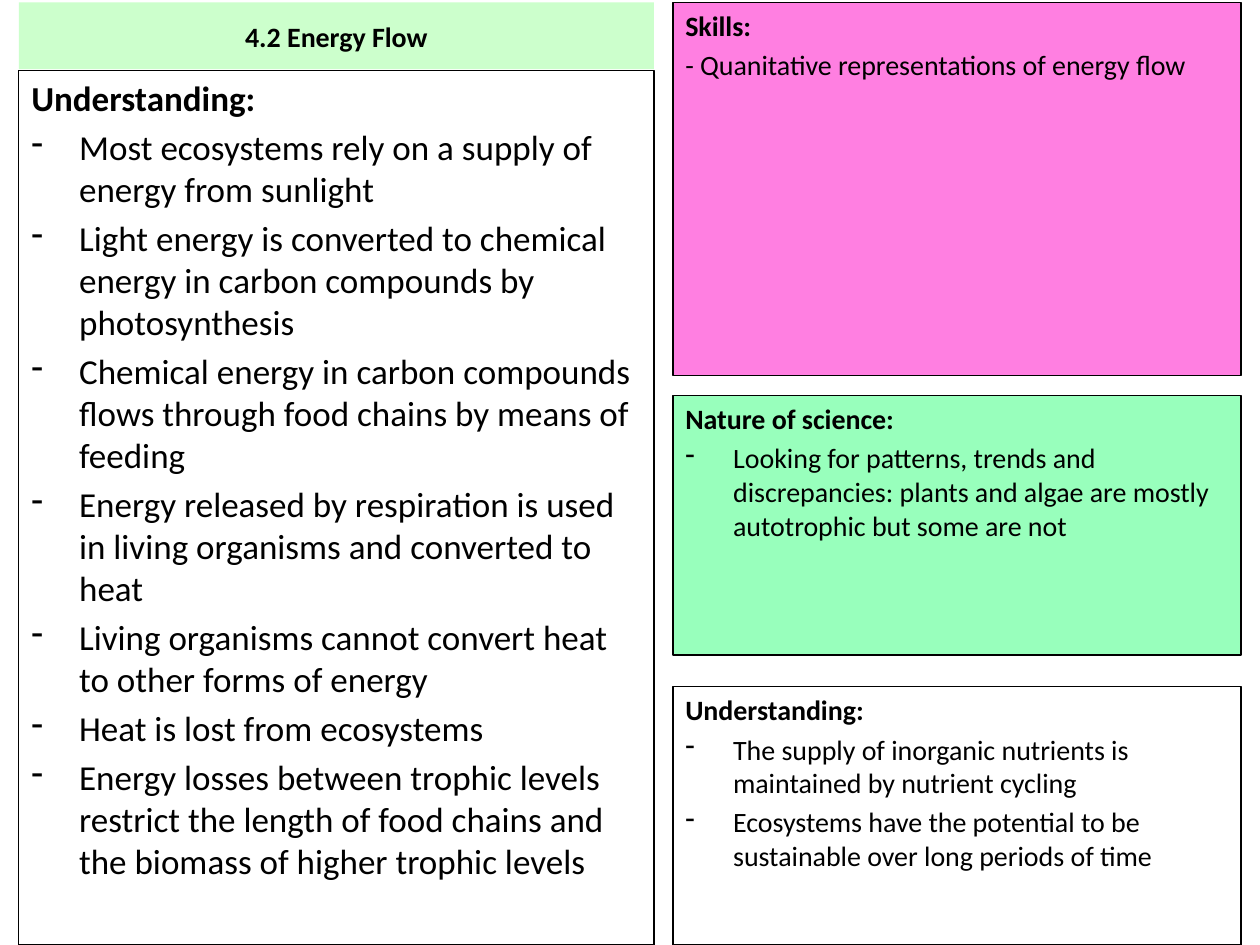
"""Build a one-slide summary of energy flow in ecosystems."""
from dataclasses import dataclass

from lxml import etree
from pptx import Presentation
from pptx.dml.color import RGBColor
from pptx.enum.shapes import MSO_SHAPE
from pptx.enum.text import MSO_ANCHOR, PP_ALIGN
from pptx.oxml.ns import qn
from pptx.util import Inches, Pt

RECT = MSO_SHAPE.RECTANGLE
TOP, MIDDLE = MSO_ANCHOR.TOP, MSO_ANCHOR.MIDDLE
LEFT, CENTER = PP_ALIGN.LEFT, PP_ALIGN.CENTER


@dataclass(frozen=True)
class Theme:
    font: str = "Calibri"
    ink: str = "000000"
    title: str = "CCFFCC"
    skills: str = "FF7FE1"
    nature: str = "98FFBC"
    large: int = 20
    small: int = 16
    rule: float = 0.75
    gap: float = 0.2
    indent: float = 0.38


THEME = Theme()


def write(par, text, size=THEME.small, bold=False, align=LEFT, gap=0, bullet=False):
    par.alignment = align
    par.space_before = Pt(size * gap)
    run = par.add_run()
    run.text = text
    run.font.name = THEME.font
    run.font.size = Pt(size)
    run.font.bold = bold
    run.font.color.rgb = RGBColor.from_string(THEME.ink)
    if bullet:
        props = par._p.get_or_add_pPr()
        props.set("marL", str(Inches(THEME.indent)))
        props.set("indent", str(-Inches(THEME.indent)))
        etree.SubElement(props, qn("a:buChar")).set("char", "-")


class Board:
    def __init__(self, slide, theme):
        self.slide = slide
        self.theme = theme

    def box(self, area, fill=None, line=True, anchor=TOP):
        shape = self.slide.shapes.add_shape(RECT, *map(Inches, area))
        shape.shadow.inherit = False
        if fill:
            shape.fill.solid()
            shape.fill.fore_color.rgb = RGBColor.from_string(fill)
        else:
            shape.fill.background()
        if line:
            shape.line.color.rgb = RGBColor.from_string(self.theme.ink)
            shape.line.width = Pt(self.theme.rule)
        else:
            shape.line.fill.background()
        frame = shape.text_frame
        frame.word_wrap = True
        frame.vertical_anchor = anchor
        return frame

    def title(self, area, text):
        frame = self.box(area, self.theme.title, line=False, anchor=MIDDLE)
        write(frame.paragraphs[0], text, bold=True, align=CENTER)

    def panel(self, area, head, items, fill=None, size=THEME.small, bullet=True):
        frame = self.box(area, fill)
        gap = self.theme.gap
        write(frame.paragraphs[0], head, size=size, bold=True, gap=gap)
        for item in items:
            write(frame.add_paragraph(), item, size=size, gap=gap, bullet=bullet)


def main():
    deck = Presentation()
    deck.slide_width, deck.slide_height = Inches(10), Inches(7.5)
    board = Board(deck.slides.add_slide(deck.slide_layouts[6]), THEME)

    main_x, main_w = 0.15, 5.04
    side_x, side_w = 5.34, 4.51
    board.title((main_x, 0.02, main_w, 0.53), "4.2 Energy Flow")
    board.panel((main_x, 0.56, main_w, 6.94), "Understanding:", [
        "Most ecosystems rely on a supply of energy from sunlight",
        "Light energy is converted to chemical energy in carbon compounds by photosynthesis",
        "Chemical energy in carbon compounds flows through food chains by means of feeding",
        "Energy released by respiration is used in living organisms and converted to heat",
        "Living organisms cannot convert heat to other forms of energy",
        "Heat is lost from ecosystems",
        "Energy losses between trophic levels restrict the length of food chains "
        "and the biomass of higher trophic levels",
    ], size=THEME.large)
    board.panel((side_x, 0.02, side_w, 2.96), "Skills:", [
        "- Quanitative representations of energy flow",
    ], fill=THEME.skills, bullet=False)
    board.panel((side_x, 3.14, side_w, 2.06), "Nature of science:", [
        "Looking for patterns, trends and discrepancies: plants and algae "
        "are mostly autotrophic but some are not",
    ], fill=THEME.nature)
    board.panel((side_x, 5.45, side_w, 2.05), "Understanding:", [
        "The supply of inorganic nutrients is maintained by nutrient cycling",
        "Ecosystems have the potential to be sustainable over long periods of time",
    ])
    deck.save("out.pptx")


if __name__ == "__main__":
    main()
